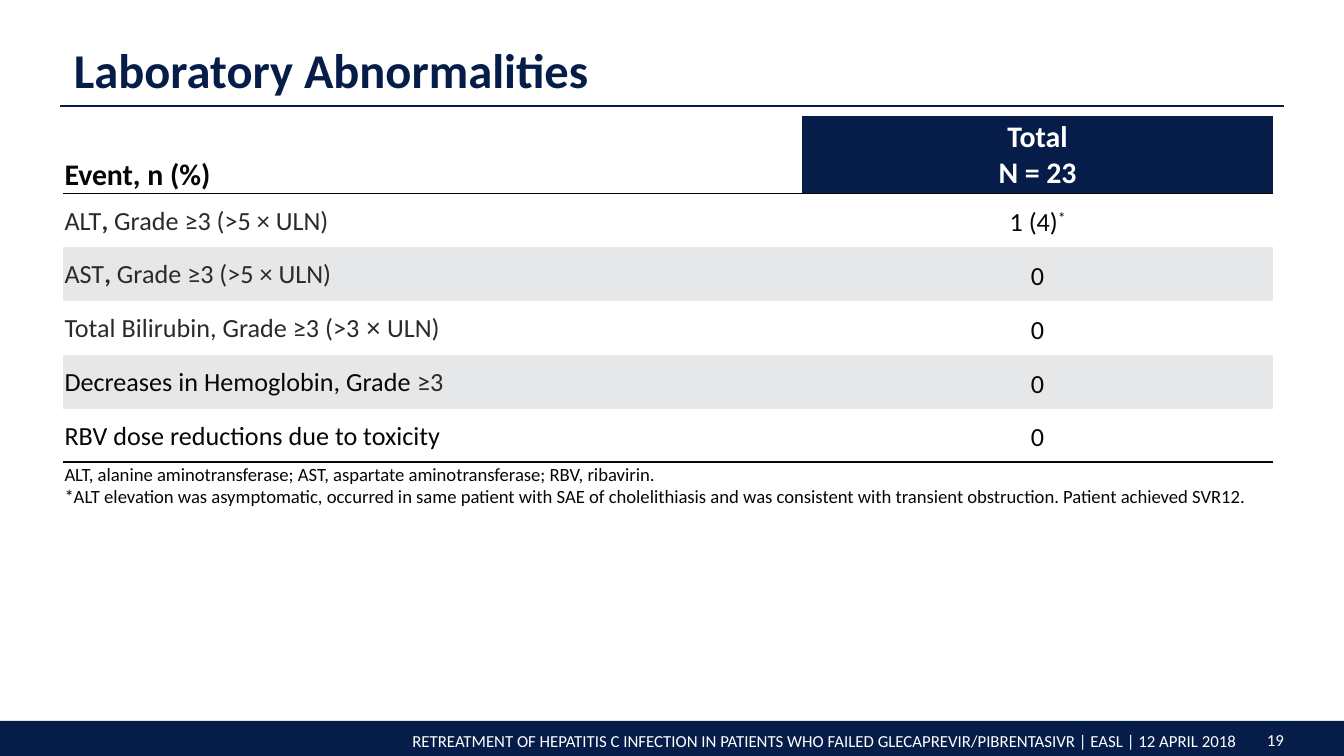
from dataclasses import dataclass

from lxml import etree
from pptx import Presentation
from pptx.dml.color import RGBColor
from pptx.enum.shapes import MSO_CONNECTOR, MSO_SHAPE
from pptx.enum.text import MSO_ANCHOR, MSO_AUTO_SIZE, PP_ALIGN
from pptx.oxml.ns import qn
from pptx.util import Inches, Pt

LEFT, CENTER, RIGHT = PP_ALIGN.LEFT, PP_ALIGN.CENTER, PP_ALIGN.RIGHT
MIDDLE, BOTTOM = MSO_ANCHOR.MIDDLE, MSO_ANCHOR.BOTTOM
TITLE_ONLY = 5
PAGE_WIDTH = 10
PAGE_HEIGHT = PAGE_WIDTH * 9 / 16


@dataclass(frozen=True)
class Theme:
    navy: str = "071D49"
    ink: str = "070605"
    gray: str = "2D2926"
    band: str = "E6E7E9"
    white: str = "FFFFFF"
    font: str = "Calibri"
    symbol_font: str = "Arial"
    title: int = 26
    header: int = 16
    body: int = 14
    note: int = 10
    footer: int = 9


THEME = Theme()
GRAY = {"color": THEME.gray}
COMMA = (", ", {"color": THEME.gray, "bold": True})
FIVE_TIMES = ("Grade ≥3 (>5 × ULN)", GRAY)

# Each event: the spans of its label, then the spans of its count.
EVENTS = [
    ([("ALT", GRAY), COMMA, FIVE_TIMES], [("1 (4)", {}), ("*", {"raised": True})]),
    ([("AST", GRAY), COMMA, FIVE_TIMES], [("0", {})]),
    ([("Total Bilirubin, Grade ≥3 (>3 ", GRAY),
      ("×", {"color": THEME.gray, "name": THEME.symbol_font}),
      (" ULN)", GRAY)], [("0", {})]),
    ([("Decreases in Hemoglobin, Grade ", {}), ("≥3", GRAY)], [("0", {})]),
    ([("RBV dose reductions due to toxicity", {})], [("0", {})]),
]
NOTES = [
    "ALT, alanine aminotransferase; AST, aspartate aminotransferase; RBV, ribavirin.",
    "*ALT elevation was asymptomatic, occurred in same patient with SAE of "
    "cholelithiasis and was consistent with transient obstruction. "
    "Patient achieved SVR12.",
]
FOOTER = ("RETREATMENT OF HEPATITIS C INFECTION IN PATIENTS WHO FAILED "
          "GLECAPREVIR/PIBRENTASIVR | EASL | 12 APRIL 2018")


def add_span(para, text, size, color=THEME.ink, bold=False, name=THEME.font,
             raised=False):
    span = para.add_run()
    span.text = text
    for key, value in {"size": Pt(size), "bold": bold, "name": name}.items():
        setattr(span.font, key, value)
    span.font.color.rgb = RGBColor.from_string(color)
    if raised:
        span.font._element.set("baseline", "30000")


def write(frame, paragraphs, size, align=LEFT, spacing=1.0, **look):
    """Fill a text frame; each paragraph is a list of (text, look) spans."""
    for index, spans in enumerate(paragraphs):
        para = frame.add_paragraph() if index else frame.paragraphs[0]
        para.alignment = align
        para.line_spacing = spacing
        for text, own_look in spans:
            add_span(para, text, size, **{**look, **own_look})


def set_title(page, text):
    title = page.shapes.title
    place = {"left": 0.45, "top": 0.21, "width": 9.1, "height": 0.58}
    for key, value in place.items():
        setattr(title, key, Inches(value))
    frame = title.text_frame
    frame.auto_size = MSO_AUTO_SIZE.NONE
    frame.vertical_anchor = BOTTOM
    write(frame, [[(text, {})]], THEME.title, spacing=0.9, color=THEME.navy, bold=True)


def add_rule(page, left, right, top):
    rule = page.shapes.add_connector(
        MSO_CONNECTOR.STRAIGHT, Inches(left), Inches(top), Inches(right), Inches(top))
    rule.line.color.rgb = RGBColor.from_string(THEME.navy)
    rule.line.width = Pt(0.75)
    etree.SubElement(rule._element.spPr, qn("a:effectLst"))


def add_bar(page, left, top, width, height):
    bar = page.shapes.add_shape(
        MSO_SHAPE.RECTANGLE, Inches(left), Inches(top), Inches(width), Inches(height))
    bar.shadow.inherit = False
    bar.fill.solid()
    bar.fill.fore_color.rgb = RGBColor.from_string(THEME.navy)
    bar.line.fill.background()


def add_footer_text(page, text, place, align, spacing=1.0):
    box = page.shapes.add_textbox(*map(Inches, place))
    box.text_frame.word_wrap = True
    write(box.text_frame, [[(text, {})]], THEME.footer, align, spacing,
          color=THEME.white)


def set_borders(cell, ruled):
    """Rule the sides named in ruled and clear the others."""
    properties = cell._tc.get_or_add_tcPr()
    for side in "LRTB":
        line = etree.SubElement(properties, qn(f"a:ln{side}"), w=str(Pt(1)))
        if side in ruled:
            fill = etree.SubElement(line, qn("a:solidFill"))
            etree.SubElement(fill, qn("a:srgbClr"), val=THEME.ink)
        else:
            etree.SubElement(line, qn("a:noFill"))


def style_cell(cell, fill, ruled="", anchor=MIDDLE, margins=(0.01, 0.01, 0.01, 0)):
    set_borders(cell, ruled)
    cell.fill.solid()
    cell.fill.fore_color.rgb = RGBColor.from_string(fill)
    cell.vertical_anchor = anchor
    for side, margin in zip(("left", "top", "right", "bottom"), margins):
        setattr(cell, f"margin_{side}", Inches(margin))


def add_event_table(page):
    widths = [5.5, 3.5]
    heights = [0.58] + [0.4] * len(EVENTS) + [0.26]
    table = page.shapes.add_table(
        len(heights), len(widths), Inches(0.47), Inches(0.86),
        Inches(sum(widths)), Inches(sum(heights))).table
    table.first_row = table.horz_banding = False
    for column, width in zip(table.columns, widths):
        column.width = Inches(width)
    for row, height in zip(table.rows, heights):
        row.height = Inches(height)

    event_head, total_head = table.cell(0, 0), table.cell(0, 1)
    style_cell(event_head, THEME.white, "B", BOTTOM)
    write(event_head.text_frame, [[("Event, n (%)", {})]], THEME.header, bold=True)
    style_cell(total_head, THEME.navy, "B")
    write(total_head.text_frame, [[("Total", {})], [("N = 23", {})]],
          THEME.header, CENTER, color=THEME.white, bold=True)

    for index, (label, count) in enumerate(EVENTS, start=1):
        fill = THEME.white if index % 2 else THEME.band
        ruled = {1: "T", len(EVENTS): "B"}.get(index, "")
        label_cell, count_cell = table.cell(index, 0), table.cell(index, 1)
        style_cell(label_cell, fill, ruled)
        write(label_cell.text_frame, [label], THEME.body)
        style_cell(count_cell, fill, ruled, margins=(0.07, 0, 0.07, 0))
        write(count_cell.text_frame, [count], THEME.body, CENTER, 1.15)

    last = len(heights) - 1
    note_cell = table.cell(last, 0)
    note_cell.merge(table.cell(last, 1))
    style_cell(note_cell, THEME.white, "T")
    write(note_cell.text_frame, [[(note, {})] for note in NOTES], THEME.note)


def main():
    deck = Presentation()
    deck.slide_width, deck.slide_height = Inches(PAGE_WIDTH), Inches(PAGE_HEIGHT)
    page = deck.slides.add_slide(deck.slide_layouts[TITLE_ONLY])
    bar_height = 0.26
    add_bar(page, 0, PAGE_HEIGHT - bar_height, PAGE_WIDTH, bar_height)
    add_footer_text(page, FOOTER, (-0.35, 5.39, 9.64, 0.25), RIGHT)
    add_footer_text(page, "19", (9.3, 5.4, 0.38, 0.24), CENTER, 0.9)
    add_rule(page, 0.45, 9.55, 0.79)
    set_title(page, "Laboratory Abnormalities")
    add_event_table(page)
    deck.save("out.pptx")


if __name__ == "__main__":
    main()
